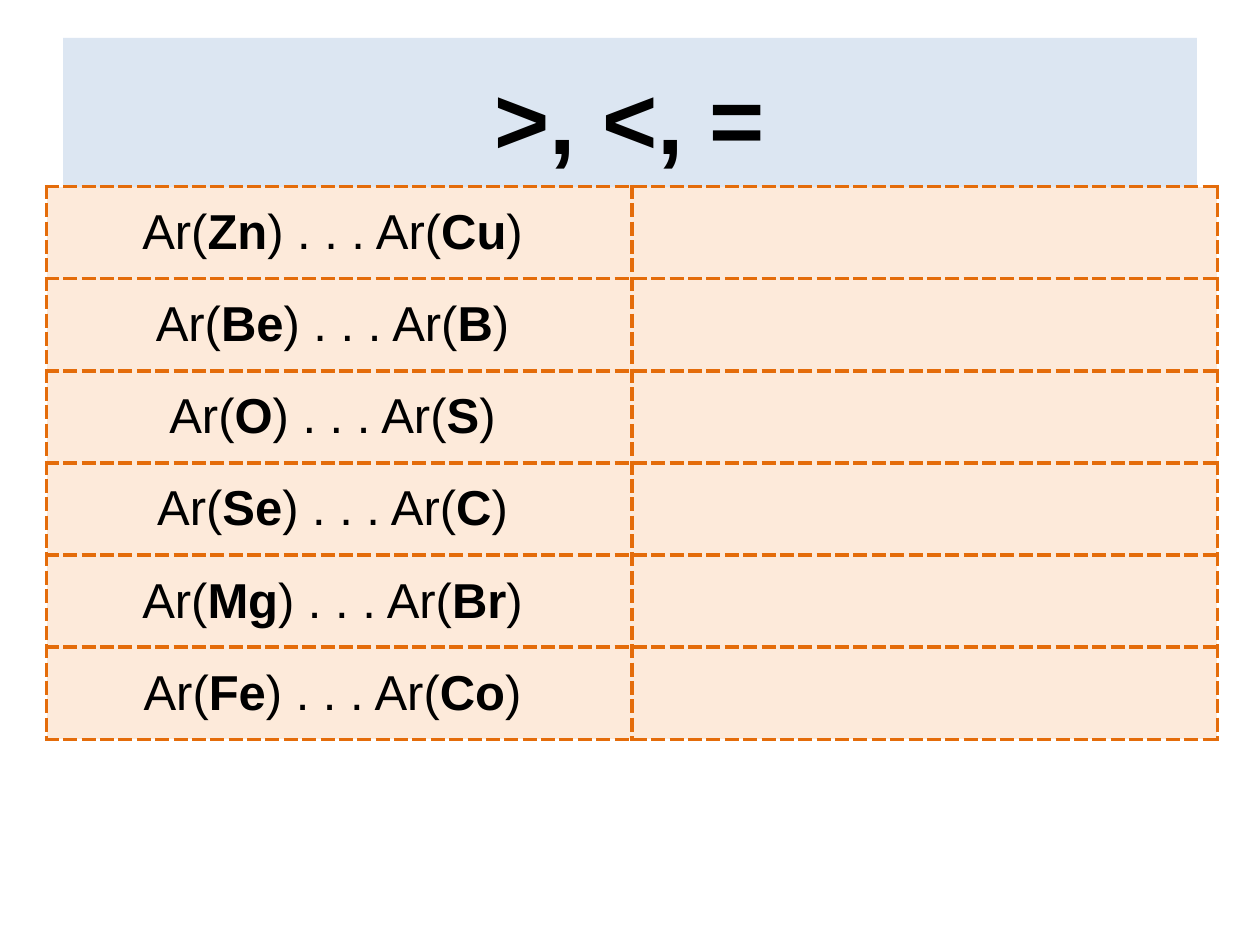
"""Build a slide for comparing relative atomic masses of element pairs."""
from dataclasses import dataclass

from lxml import etree
from pptx import Presentation
from pptx.dml.color import RGBColor
from pptx.enum.text import MSO_ANCHOR, PP_ALIGN
from pptx.oxml.ns import qn
from pptx.util import Pt

MIDDLE = MSO_ANCHOR.MIDDLE
CENTER = PP_ALIGN.CENTER
TITLE_ONLY = 5
ELEMENT_PAIRS = [
    ("Zn", "Cu"), ("Be", "B"), ("O", "S"),
    ("Se", "C"), ("Mg", "Br"), ("Fe", "Co"),
]


@dataclass(frozen=True)
class Theme:
    """Colours, font and type sizes of the slide."""
    font: str = "Arial"
    text: str = "000000"
    title_fill: str = "DCE6F2"
    cell_fill: str = "FDEADA"
    border: str = "E46C0A"
    border_width: float = 2.25
    title_size: int = 54
    cell_size: int = 28


class SlideBuilder:
    """Holds the theme and the current slide."""

    def __init__(self, slide, theme):
        """Keep the slide and its theme."""
        self.slide = slide
        self.theme = theme

    def style(self, run, size, bold):
        """Format one run of text."""
        run.font.name = self.theme.font
        run.font.size = Pt(size)
        run.font.bold = bold
        run.font.color.rgb = RGBColor.from_string(self.theme.text)

    def fill(self, part, color):
        """Give a shape or cell a solid fill."""
        part.fill.solid()
        part.fill.fore_color.rgb = RGBColor.from_string(color)

    def title(self, text, left, top, width, height):
        """Place and format the title."""
        heading = self.slide.shapes.title
        heading.left, heading.top = Pt(left), Pt(top)
        heading.width, heading.height = Pt(width), Pt(height)
        self.fill(heading, self.theme.title_fill)
        frame = heading.text_frame
        frame.text = text
        frame.vertical_anchor = MIDDLE
        frame.paragraphs[0].alignment = CENTER
        self.style(frame.paragraphs[0].runs[0], self.theme.title_size, True)

    def border(self, cell):
        """Draw dashed lines on all four sides of a cell."""
        properties = cell._tc.get_or_add_tcPr()
        for side in ("lnL", "lnR", "lnT", "lnB"):
            line = etree.SubElement(properties, qn(f"a:{side}"),
                                    w=str(Pt(self.theme.border_width)))
            solid = etree.SubElement(line, qn("a:solidFill"))
            etree.SubElement(solid, qn("a:srgbClr"), val=self.theme.border)
            etree.SubElement(line, qn("a:prstDash"), val="dash")

    def comparison(self, cell, first, second):
        """Write one pair of elements with bold symbols."""
        cell.vertical_anchor = MIDDLE
        paragraph = cell.text_frame.paragraphs[0]
        paragraph.alignment = CENTER
        for part in ("Ar(", first, ") . . . Ar(", second, ") "):
            run = paragraph.add_run()
            run.text = part
            self.style(run, self.theme.cell_size, part in (first, second))

    def pairs_table(self, pairs, left, top, column_width, row_height):
        """Add the table of pairs with an empty answer column."""
        table = self.slide.shapes.add_table(
            len(pairs), 2, Pt(left), Pt(top),
            Pt(2 * column_width), Pt(len(pairs) * row_height)).table
        table.first_row = table.horz_banding = False
        for column in table.columns:
            column.width = Pt(column_width)
        for row, pair in zip(table.rows, pairs):
            row.height = Pt(row_height)
            for cell in row.cells:
                self.border(cell)
                self.fill(cell, self.theme.cell_fill)
            self.comparison(row.cells[0], *pair)


def main():
    """Create and save the presentation."""
    deck = Presentation()
    deck.slide_width, deck.slide_height = Pt(720), Pt(540)
    slide = deck.slides.add_slide(deck.slide_layouts[TITLE_ONLY])
    builder = SlideBuilder(slide, Theme())
    builder.title(">, <, =", 36, 21.6, 648, 90)
    builder.pairs_table(ELEMENT_PAIRS, 26.65, 106.6, 334.5, 52.65)
    deck.save("out.pptx")


if __name__ == "__main__":
    main()
